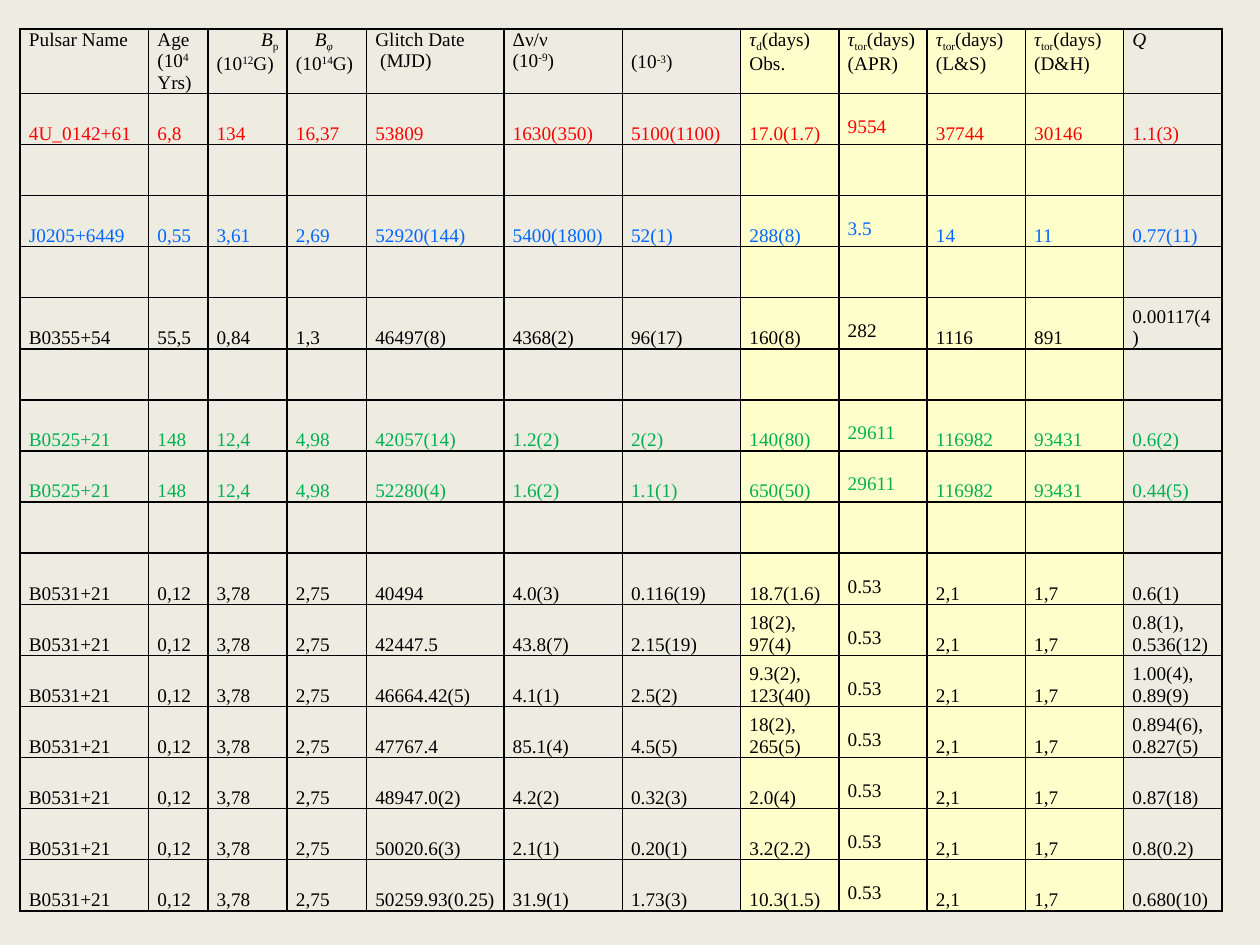
from lxml import etree
from pptx import Presentation
from pptx.dml.color import RGBColor
from pptx.enum.text import MSO_ANCHOR, PP_ALIGN
from pptx.oxml.ns import qn
from pptx.util import Inches, Pt

TOP, BOTTOM = MSO_ANCHOR.TOP, MSO_ANCHOR.BOTTOM
LEFT, RIGHT, JUSTIFY = PP_ALIGN.LEFT, PP_ALIGN.RIGHT, PP_ALIGN.JUSTIFY

COLORS = {
    "background": "EEECE1",
    "highlight": "FFFFCC",
    "black": "000000",
    "red": "FF0000",
    "blue": "0066FF",
    "green": "00B050",
}
FONT = "Times New Roman"
FONT_SIZE = 11
LINE_OFFSET = 0.18
BASELINES = {"^": "30000", "_": "-25000"}

COL_WIDTHS = [1.02, 0.47, 0.63, 0.63, 1.09, 0.94, 0.94, 0.78, 0.7, 0.78, 0.78, 0.78]
TABLE_HEIGHT = 7
HEADER_HEIGHT = 0.51
BP_COL, BPHI_COL, RATIO_COL, APR_COL = 2, 3, 6, 8
HIGHLIGHT_COLS = range(7, 11)


def power(exponent, end):
    return [("(10", ""), (exponent, "^"), (end, "")]


def tau(subscript, end):
    return [("τ", "i"), (subscript, "_"), (end, "")]


HEADERS = [
    [[("Pulsar Name", "")]],
    [[("Age", "")], power("4 ", "Yrs)")],
    [[("B", "i"), ("p", "_")], power("12", "G)")],
    [[("B", "i"), ("φ", "i_")], power("14", "G)")],
    [[("Glitch Date", "")], [(" (MJD)", "")]],
    [[("Δν/ν", "")], power("-9", ")")],
    [power("-3", ")")],
    [tau("d", "(days) Obs.")],
    [tau("tor", "(days) (APR)")],
    [tau("tor", "(days) (L&S)")],
    [tau("tor", "(days)"), [("(D&H)", "")]],
    [[("Q", "i")]],
]

PULSARS = [
    ("red", ["4U_0142+61", "6,8", "134", "16,37"], ["9554", "37744", "30146"],
     [["53809", "1630(350)", "5100(1100)", "17.0(1.7)", "1.1(3)"]]),
    ("blue", ["J0205+6449", "0,55", "3,61", "2,69"], ["3.5", "14", "11"],
     [["52920(144)", "5400(1800)", "52(1)", "288(8)", "0.77(11)"]]),
    ("black", ["B0355+54", "55,5", "0,84", "1,3"], ["282", "1116", "891"],
     [["46497(8)", "4368(2)", "96(17)", "160(8)", "0.00117(4)"]]),
    ("green", ["B0525+21", "148", "12,4", "4,98"], ["29611", "116982", "93431"],
     [["42057(14)", "1.2(2)", "2(2)", "140(80)", "0.6(2)"],
      ["52280(4)", "1.6(2)", "1.1(1)", "650(50)", "0.44(5)"]]),
    ("black", ["B0531+21", "0,12", "3,78", "2,75"], ["0.53", "2,1", "1,7"],
     [["40494", "4.0(3)", "0.116(19)", "18.7(1.6)", "0.6(1)"],
      ["42447.5", "43.8(7)", "2.15(19)", "18(2), 97(4)", "0.8(1), 0.536(12)"],
      ["46664.42(5)", "4.1(1)", "2.5(2)", "9.3(2), 123(40)", "1.00(4), 0.89(9)"],
      ["47767.4", "85.1(4)", "4.5(5)", "18(2), 265(5)", "0.894(6), 0.827(5)"],
      ["48947.0(2)", "4.2(2)", "0.32(3)", "2.0(4)", "0.87(18)"],
      ["50020.6(3)", "2.1(1)", "0.20(1)", "3.2(2.2)", "0.8(0.2)"],
      ["50259.93(0.25)", "31.9(1)", "1.73(3)", "10.3(1.5)", "0.680(10)"]]),
]


def rgb(name):
    return RGBColor.from_string(COLORS[name])


def body_rows():
    rows = []
    for color, star, torques, glitches in PULSARS:
        if rows:
            rows.append(("black", [""] * len(COL_WIDTHS)))
        for *observed, q in glitches:
            rows.append((color, star + observed + torques + [q]))
    return rows


def set_borders(cell):
    tcPr = cell._tc.get_or_add_tcPr()
    for side in ("a:lnL", "a:lnR", "a:lnT", "a:lnB"):
        ln = etree.SubElement(tcPr, qn(side), w=str(Pt(1)))
        fill = etree.SubElement(ln, qn("a:solidFill"))
        etree.SubElement(fill, qn("a:srgbClr"), val=COLORS["black"])


def format_cell(cell, col, anchor):
    set_borders(cell)
    cell.margin_left = cell.margin_right = Inches(0.07)
    cell.margin_top = cell.margin_bottom = 0
    cell.vertical_anchor = anchor
    if col in HIGHLIGHT_COLS:
        cell.fill.solid()
        cell.fill.fore_color.rgb = rgb("highlight")
    else:
        cell.fill.background()


def format_paragraph(p, color, align):
    p.alignment = align
    p.font.name = FONT
    p.font.size = Pt(FONT_SIZE)
    p.font.bold = False
    p.font.color.rgb = rgb(color)


def add_run(p, text, style):
    r = p.add_run()
    r.text = text
    if "i" in style:
        r.font.italic = True
    for mark, baseline in BASELINES.items():
        if mark in style:
            r.font._element.set("baseline", baseline)


def fill_header(cell, col, paragraphs):
    format_cell(cell, col, TOP)
    if col == RATIO_COL:
        cell.margin_top = Inches(LINE_OFFSET)
    tf = cell.text_frame
    for i, runs in enumerate(paragraphs):
        p = tf.paragraphs[0] if i == 0 else tf.add_paragraph()
        format_paragraph(p, "black", RIGHT if col == BP_COL and i == 0 else JUSTIFY)
        if col == BPHI_COL and i == 0:
            p._p.get_or_add_pPr().set("marL", str(Inches(0.15)))
        for text, style in runs:
            add_run(p, text, style)


def fill_body(cell, col, text, color):
    format_cell(cell, col, TOP if col == APR_COL else BOTTOM)
    if col == APR_COL:
        cell.margin_top = Inches(LINE_OFFSET)
    p = cell.text_frame.paragraphs[0]
    format_paragraph(p, color, LEFT)
    if text:
        add_run(p, text, "")


def add_glitch_table(s):
    rows = body_rows()
    frame = s.shapes.add_table(len(rows) + 1, len(COL_WIDTHS), Inches(0.16), Inches(0.23),
                               Inches(sum(COL_WIDTHS)), Inches(TABLE_HEIGHT))
    table = frame.table
    table.first_row = table.horz_banding = False
    for column, width in zip(table.columns, COL_WIDTHS):
        column.width = Inches(width)
    for row in table.rows:
        row.height = Inches((TABLE_HEIGHT - HEADER_HEIGHT) / len(rows))
    table.rows[0].height = Inches(HEADER_HEIGHT)
    for col, paragraphs in enumerate(HEADERS):
        fill_header(table.cell(0, col), col, paragraphs)
    for i, (color, values) in enumerate(rows, 1):
        for col, text in enumerate(values):
            fill_body(table.cell(i, col), col, text, color)


def main():
    prs = Presentation()
    prs.slide_width, prs.slide_height = Inches(10), Inches(7.5)
    s = prs.slides.add_slide(prs.slide_layouts[6])
    s.background.fill.solid()
    s.background.fill.fore_color.rgb = rgb("background")
    add_glitch_table(s)
    prs.save("out.pptx")


if __name__ == "__main__":
    main()
